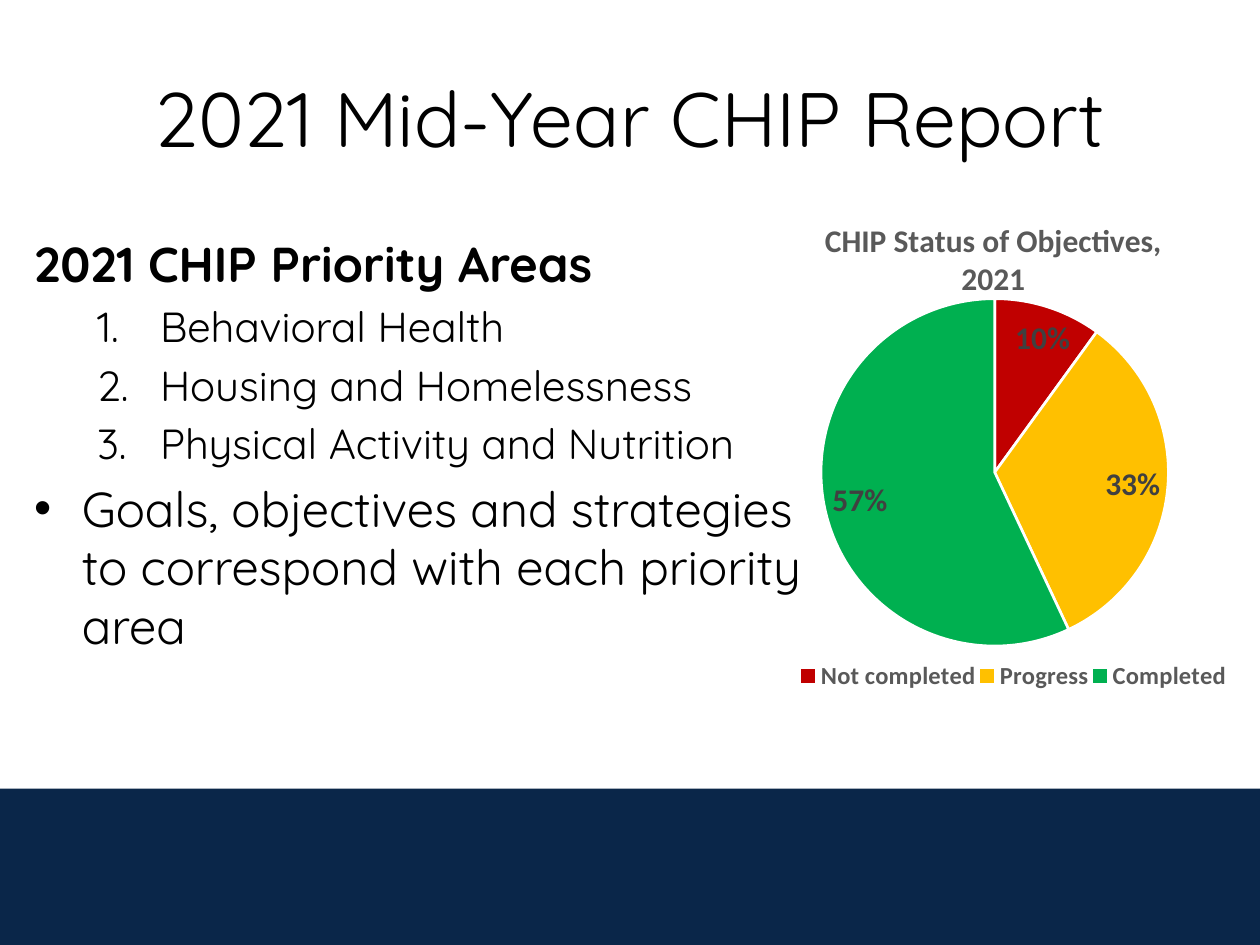
from pptx import Presentation, oxml
from pptx import util as u
from pptx.chart.data import CategoryChartData
from pptx.dml.color import RGBColor
from pptx.enum import chart as ch, shapes, text
from pptx.oxml import ns

NAVY = RGBColor(0x0A, 0x26, 0x49)
BLACK = RGBColor(0, 0, 0)
WHITE = RGBColor(0xFF, 0xFF, 0xFF)
GREY = RGBColor(0x59, 0x59, 0x59)
DARK_GREY = RGBColor(0x40, 0x40, 0x40)
RED = RGBColor(0xC0, 0, 0)
AMBER = RGBColor(0xFF, 0xC0, 0)
GREEN = RGBColor(0, 0xB0, 0x50)

PRIORITIES = ["Behavioral Health", "Housing and Homelessness",
              "Physical Activity and Nutrition"]
# Name, share, colour, label shift (fractions of the chart)
STATUS = [("Not completed", 0.10, RED, (0.05, 0.01)),
          ("Progress", 0.33, AMBER, (0, 0.03)),
          ("Completed ", 0.57, GREEN, (0, 0.02))]


def set_font(font, size, color, bold=False, name="Calibri"):
    font.size, font.bold, font.name = u.Pt(size), bold, name
    font.color.rgb = color


def place(sp, left, top, width, height):
    sp.left, sp.top = u.Inches(left), u.Inches(top)
    sp.width, sp.height = u.Inches(width), u.Inches(height)


def write(p, words, size=28, bold=False, level=0, left=0, hang=0,
          bullet="buNone", align=None, **attrs):
    """Fill one paragraph with text, indent and bullet."""
    p.level = level
    pPr = p._p.get_or_add_pPr()
    pPr.set("marL", str(u.Inches(left)))
    pPr.set("indent", str(-u.Inches(hang)))
    mark = oxml.parse_xml(f'<a:{bullet} {ns.nsdecls("a")}/>')
    for key, value in attrs.items():
        mark.set(key, value)
    pPr.append(mark)
    p.alignment = align
    r = p.add_run()
    r.text = words
    set_font(r.font, size, BLACK, bold, "Quicksand")


def add_band(s):
    sp = s.shapes.add_shape(shapes.MSO_SHAPE.RECTANGLE, u.Inches(0),
                            u.Inches(6.26), u.Inches(10), u.Inches(1.24))
    sp.shadow.inherit = False
    sp.fill.solid()
    sp.fill.fore_color.rgb = NAVY
    sp.line.fill.background()
    s.shapes._spTree.insert(2, sp._element)  # behind the placeholders


def fill_title(sp):
    place(sp, 0.5, 0.3, 9, 1.25)
    sp.text_frame.vertical_anchor = text.MSO_ANCHOR.MIDDLE
    write(sp.text_frame.paragraphs[0], "2021 Mid-Year CHIP Report", size=44,
          align=text.PP_ALIGN.CENTER)


def fill_body(sp):
    place(sp, 0.17, 1.8, 6.58, 4.95)
    tf = sp.text_frame
    write(tf.paragraphs[0], "2021 CHIP Priority Areas", bold=True)
    for area in PRIORITIES:
        write(tf.add_paragraph(), area, size=24, level=1, left=1, hang=0.5,
              bullet="buAutoNum", type="arabicPeriod")
    write(tf.add_paragraph(), "Goals, objectives and strategies to correspond "
          "with each priority area", left=0.38, hang=0.38,
          bullet="buChar", char="•")


def set_layout(parent, index, target=None, mode="edge", **box):
    """Give a chart part a fixed place, in fractions of the chart."""
    for old in parent.findall(ns.qn("c:layout")):
        parent.remove(old)
    values = {"layoutTarget": target} if target else {}
    values.update(xMode=mode, yMode=mode, **box)
    items = "".join(f'<c:{k} val="{v}"/>' for k, v in values.items())
    parent.insert(index, oxml.parse_xml(
        f'<c:layout {ns.nsdecls("c")}><c:manualLayout>{items}'
        '</c:manualLayout></c:layout>'))


def format_slices(series):
    labels = series.data_labels
    labels.show_value = True
    labels.number_format, labels.number_format_is_linked = "0%", False
    for i, (_, _, color, _) in enumerate(STATUS):
        point = series.points[i]
        point.format.fill.solid()
        point.format.fill.fore_color.rgb = color
        point.format.line.color.rgb = WHITE
        point.format.line.width = u.Pt(1.5)
        set_font(point.data_label.font, 18, DARK_GREY, True)
        point.data_label.position = ch.XL_LABEL_POSITION.INSIDE_END
    label_elements = series._element.iter(ns.qn("c:dLbl"))
    for dLbl, (_, _, _, (dx, dy)) in zip(list(label_elements), STATUS):
        set_layout(dLbl, 1, mode="factor", x=dx, y=dy)


def add_status_chart(s):
    data = CategoryChartData(number_format="0%")
    data.categories = [name for name, *_ in STATUS]
    data.add_series("Series 1", [value for _, value, *_ in STATUS])
    chart = s.shapes.add_chart(
        ch.XL_CHART_TYPE.PIE, u.Inches(5.98), u.Inches(1.55),
        u.Inches(3.83), u.Inches(4.15), data).chart
    set_font(chart.font, 10, BLACK)

    # Title
    tf = chart.chart_title.text_frame
    tf.text = "CHIP Status of Objectives,\n2021"
    for p in tf.paragraphs:
        set_font(p.runs[0].font, 18, GREY, True)
    set_layout(chart.chart_title._element, 1, x=0.14, y=0.04)

    # Legend
    chart.has_legend = True
    chart.legend.position = ch.XL_LEGEND_POSITION.BOTTOM
    chart.legend.include_in_layout = False
    set_font(chart.legend.font, 14, GREY, True)
    set_layout(chart.legend._element, 1, x=0.09, y=0.88, w=0.91, h=0.08)

    # Pie
    plot = chart.plots[0]
    plot.vary_by_categories = True
    format_slices(plot.series[0])
    plot_area = chart._chartSpace.find(".//" + ns.qn("c:plotArea"))
    set_layout(plot_area, 0, "inner", x=0.14, y=0.19, w=0.72, h=0.68)


def main():
    prs = Presentation()
    prs.slide_width, prs.slide_height = u.Inches(10), u.Inches(7.5)
    s = prs.slides.add_slide(prs.slide_layouts[1])
    add_band(s)
    fill_title(s.shapes.title)
    fill_body(s.placeholders[1])
    add_status_chart(s)
    prs.save("out.pptx")


if __name__ == "__main__":
    main()
